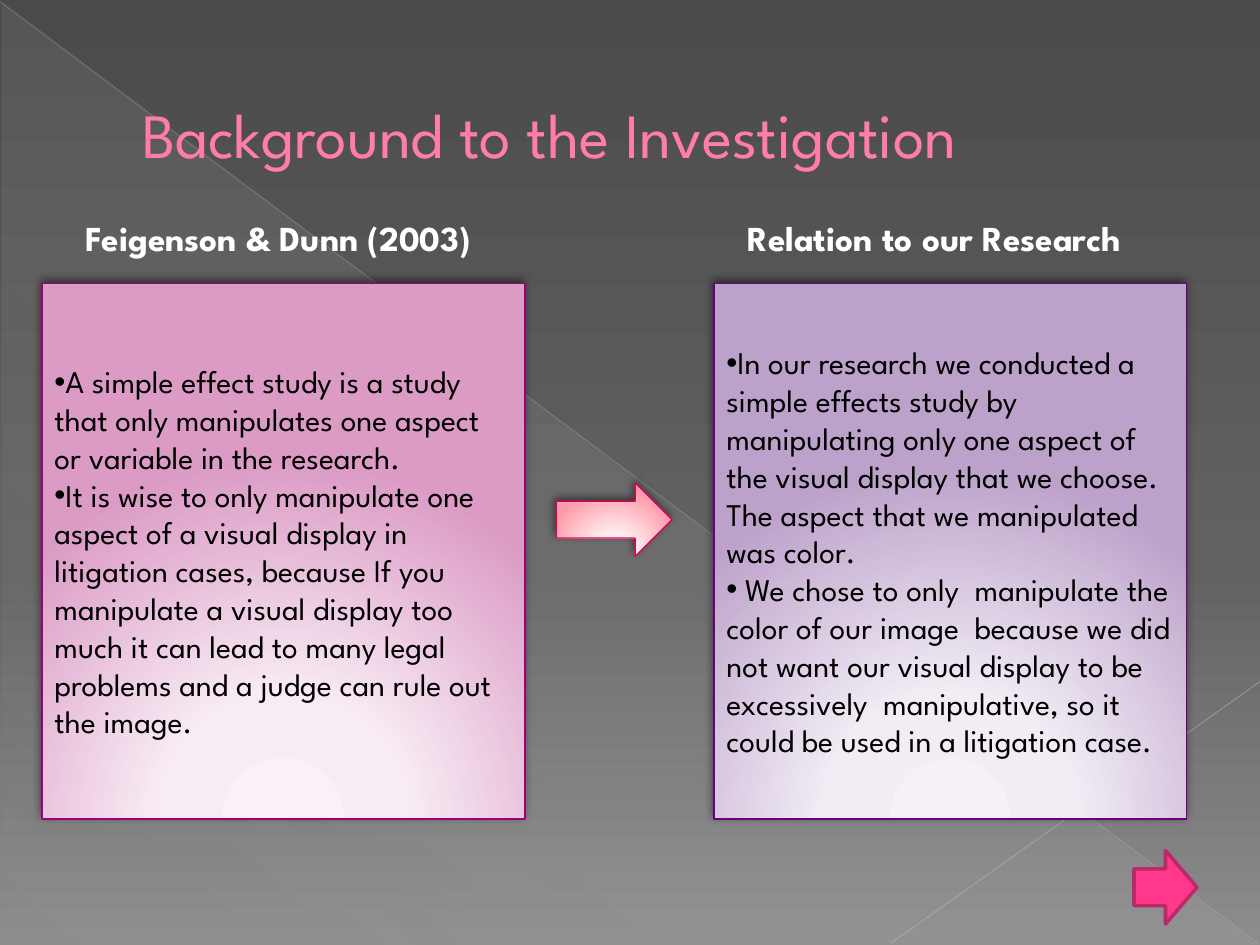
from lxml import etree
from pptx import Presentation
from pptx.dml.color import RGBColor as RGB
from pptx.enum.shapes import MSO_CONNECTOR, MSO_SHAPE as SHAPE
from pptx.enum.text import MSO_ANCHOR, MSO_AUTO_SIZE as AUTO, PP_ALIGN
from pptx.oxml.ns import qn
from pptx.util import Pt

FONT = "League Spartan"
C = {
    "title": "FF7DA7", "title_edge": "B12761", "heading": "FFFFFF", "body": "000000",
    "next": "FF388C", "next_edge": "BD2968", "sheen": "D2D2D2",
    "long_line": "BFBFBF", "short_line": "C6C6C6",
    "pink_edge": "9C007F", "purple_edge": "68007F", "arrow_edge": "E40059",
}
BACKGROUND = [(0, "4A4A4A"), (60, "626262"), (100, "8C8C8C")]
PINK = [(0, "FBF0F7"), (34, "F8ECF4"), (100, "DB9BC5")]
PURPLE = [(0, "F6F1F8"), (34, "F2EDF5"), (100, "BCA1CA")]
ROSE = [(0, "FFF1F3"), (34, "FFECEE"), (100, "FF9BA9")]


def sub(parent, tag, **attrs):
    return etree.SubElement(parent, qn(tag), {k: str(v) for k, v in attrs.items()})


def add_color(parent, color, alpha=100):
    clr = sub(parent, "a:srgbClr", val=color)
    if alpha < 100:
        sub(clr, "a:alpha", val=alpha * 1000)


def set_gradient(owner, fill, stops, angle=None):
    """Stops are (percent, colour[, opacity]); without an angle the gradient glows from below."""
    fill.gradient()
    grad = owner._element.find(".//" + qn("a:gradFill"))
    for child in list(grad):
        grad.remove(child)
    gs_lst = sub(grad, "a:gsLst")
    for pos, *color in stops:
        add_color(sub(gs_lst, "a:gs", pos=pos * 1000), *color)
    if angle is None:
        path = sub(grad, "a:path", path="circle")
        sub(path, "a:fillToRect", l=50000, t=155000, r=50000, b=-55000)
    else:
        sub(grad, "a:lin", ang=angle * 60000, scaled=0)


def style_run(r, size, color, bold=False):
    r.font.name, r.font.size, r.font.bold = FONT, Pt(size), bold
    r.font.color.rgb = RGB.from_string(color)


def add_shape(s, kind, box, edge=None, width=0.75):
    sp = s.shapes.add_shape(kind, *map(Pt, box))
    sp.shadow.inherit = False
    if edge:
        sp.line.color.rgb = RGB.from_string(edge)
        sp.line.width = Pt(width)
    else:
        sp.line.fill.background()
    return sp


def add_glow_shape(s, kind, box, stops, edge):
    sp = add_shape(s, kind, box, edge)
    set_gradient(sp, sp.fill, stops)
    effects = sp._element.spPr.find(qn("a:effectLst"))
    shadow = sub(effects, "a:outerShdw", blurRad=Pt(5), dist=Pt(2),
                 dir=245 * 60000, algn="tl", rotWithShape=0)
    add_color(shadow, "000000", 50)
    return sp


def add_line(s, start, end, color, width, alpha):
    cn = s.shapes.add_connector(MSO_CONNECTOR.STRAIGHT, *map(Pt, start + end))
    cn.line.color.rgb = RGB.from_string(color)
    cn.line.width = Pt(width)
    sub(cn._element.find(".//" + qn("a:srgbClr")), "a:alpha", val=alpha * 1000)
    sub(cn._element.spPr, "a:effectLst")


def add_backdrop(s, width, height):
    set_gradient(s, s.background.fill, BACKGROUND, 90)
    sheen = add_shape(s, SHAPE.RIGHT_TRIANGLE, (1, 1, width - 1, height - 1))
    set_gradient(sheen, sheen.fill,
                 [(pos, C["sheen"], alpha) for pos, alpha in ((0, 10), (70, 8), (100, 1))], 133)
    add_line(s, (0, 1), (width - 1, height - 1), C["long_line"], 0.39, 35)
    add_line(s, (width, 389.5), (509, height - 1), C["short_line"], 0.47, 45)


def place_title(s, text, box):
    title = s.shapes.title
    s.shapes._spTree.append(title._element)  # bring in front of the backdrop
    title.left, title.top, title.width, title.height = map(Pt, box)
    tf = title.text_frame
    tf.text = text
    tf.auto_size, tf.vertical_anchor = AUTO.NONE, MSO_ANCHOR.MIDDLE
    p = tf.paragraphs[0]
    p.alignment = PP_ALIGN.LEFT
    p._p.get_or_add_pPr().set("marL", str(Pt(38)))
    r = p.runs[0]
    style_run(r, 36, C["title"])
    outline = etree.Element(qn("a:ln"), w=str(Pt(0.5)))
    add_color(sub(outline, "a:solidFill"), C["title_edge"])
    r.font._element.insert(0, outline)


def add_panel(s, box, heading, heading_inset, points, stops, edge):
    """A heading above a glowing box of bullet points."""
    x, y, w, h = box
    sp = add_glow_shape(s, SHAPE.RECTANGLE, box, stops, edge)
    tf = sp.text_frame
    tf.word_wrap, tf.vertical_anchor = True, MSO_ANCHOR.MIDDLE
    tf.text = "\n".join(points)
    for p in tf.paragraphs:
        p.alignment = PP_ALIGN.LEFT
        pPr = p._p.get_or_add_pPr()
        sub(pPr, "a:buFont", typeface="Arial")
        sub(pPr, "a:buChar", char="•")
        style_run(p.runs[0], 18, C["body"])

    tb = s.shapes.add_textbox(*map(Pt, (x + heading_inset, y - 42, 257, 31.5)))
    tf = tb.text_frame
    tf.word_wrap, tf.auto_size = False, AUTO.SHAPE_TO_FIT_TEXT
    tf.text = heading
    style_run(tf.paragraphs[0].runs[0], 20, C["heading"], True)


def add_next_button(s, box):
    sp = add_shape(s, SHAPE.LEFT_ARROW, box, C["next_edge"], 2)
    sp.rotation = 180
    sp.fill.solid()
    sp.fill.fore_color.rgb = RGB.from_string(C["next"])


def main():
    prs = Presentation()
    prs.slide_width, prs.slide_height = Pt(720), Pt(540)
    s = prs.slides.add_slide(prs.slide_layouts[5])
    add_backdrop(s, 720, 540)
    place_title(s, "Background to the Investigation", (36, 21, 648, 110))
    add_next_button(s, (648, 486, 36, 42))
    add_panel(s, (24, 162, 276, 306), "Feigenson & Dunn (2003)", 18, [
        "A simple effect study is a study that only manipulates one aspect or variable "
        "in the research.",
        "It is wise to only manipulate one aspect of a visual display in litigation cases, "
        "because If you manipulate a visual display too much it can lead to many legal "
        "problems and a judge can rule out the image.",
    ], PINK, C["pink_edge"])
    add_panel(s, (408, 162, 270, 306), "Relation to our Research", 12, [
        "In our research we conducted a simple effects study by manipulating only one aspect "
        "of the visual display that we choose. The aspect that we manipulated was color.",
        " We chose to only  manipulate the color of our image  because we did not want our "
        "visual display to be excessively  manipulative, so it could be used in a "
        "litigation case.",
    ], PURPLE, C["purple_edge"])
    add_glow_shape(s, SHAPE.RIGHT_ARROW, (318, 276, 66, 42), ROSE, C["arrow_edge"])
    prs.save("out.pptx")


if __name__ == "__main__":
    main()
